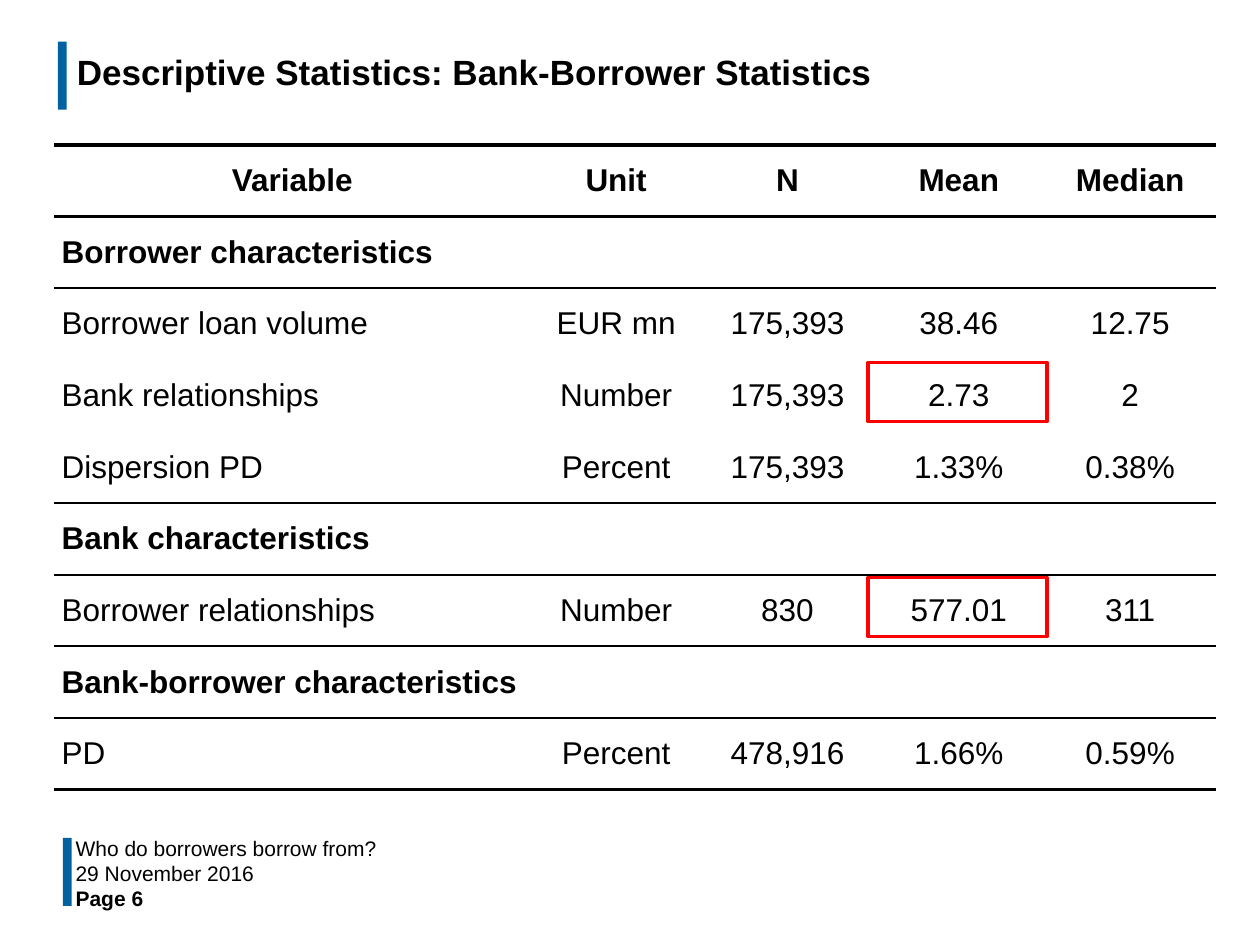
from lxml.etree import SubElement
from pptx import Presentation
from pptx.dml.color import RGBColor
from pptx.enum.shapes import MSO_SHAPE
from pptx.enum.text import MSO_ANCHOR, MSO_AUTO_SIZE, PP_ALIGN
from pptx.oxml.ns import qn
from pptx.util import Inches, Pt

BLACK, BLUE, RED = "000000", "0062A1", "FF0000"
TABLE_LEFT, TABLE_TOP = 0.43, 1.15
COLUMN_WIDTHS = [3.78] + [1.36] * 4
ROW_HEIGHT = 5.12 / 9
ROWS = [
    ["Variable", "Unit", "N", "Mean", "Median"],
    ["Borrower characteristics"],
    ["Borrower loan volume", "EUR mn", "175,393", "38.46", "12.75"],
    ["Bank relationships", "Number", "175,393", "2.73", "2"],
    ["Dispersion PD", "Percent", "175,393", "1.33%", "0.38%"],
    ["Bank characteristics"],
    ["Borrower relationships", "Number", "830", "577.01", "311"],
    ["Bank-borrower characteristics"],
    ["PD", "Percent", "478,916", "1.66%", "0.59%"],
]
# Width in points of each horizontal rule, from the table's top to its bottom
RULES = [2.25, 1.5, 1.5, 0, 0, 1.5, 1.5, 1.5, 1.5, 2.25]
MEAN_COLUMN = 3
HIGHLIGHTED_ROWS = [3, 6]
FOOTER = [("Who do borrowers borrow from?", False),
          ("29 November 2016", False), ("Page 6", True)]


def color(hex_string):
    return RGBColor.from_string(hex_string)


def write(paragraph, text, size, bold=False, align=PP_ALIGN.LEFT):
    paragraph.alignment = align
    run = paragraph.add_run()
    run.text = text
    run.font.name = "Arial"
    run.font.size = Pt(size)
    run.font.bold = bold
    run.font.color.rgb = color(BLACK)


def add_rectangle(slide, left, top, width, height, fill=None, line=None):
    shape = slide.shapes.add_shape(MSO_SHAPE.RECTANGLE, Inches(left), Inches(top),
                                   Inches(width), Inches(height))
    shape.shadow.inherit = False
    if fill:
        shape.fill.solid()
        shape.fill.fore_color.rgb = color(fill)
    else:
        shape.fill.background()
    if line:
        shape.line.color.rgb = color(line)
        shape.line.width = Pt(2)
    else:
        shape.line.fill.background()


def add_title(slide, text):
    title = slide.shapes.title
    title.left, title.top = Inches(0.51), Inches(0.28)
    title.width, title.height = Inches(9.29), Inches(0.63)
    frame = title.text_frame
    frame.auto_size = MSO_AUTO_SIZE.NONE
    frame.vertical_anchor = MSO_ANCHOR.MIDDLE
    paragraph = frame.paragraphs[0]
    paragraph.line_spacing = Pt(20.4)
    write(paragraph, text, 20, bold=True)


def add_footer_line(slide, index, text, bold):
    box = slide.shapes.add_textbox(Inches(0.51), Inches(6.64 + 0.2 * index),
                                   Inches(8.88 if index == 0 else 2.31), Inches(0.18))
    frame = box.text_frame
    frame.word_wrap = True
    frame.vertical_anchor = MSO_ANCHOR.MIDDLE
    frame.margin_left = frame.margin_right = Inches(0.09)
    frame.margin_top = frame.margin_bottom = Inches(0.04)
    write(frame.paragraphs[0], text, 12, bold)


def set_borders(cell, top, bottom):
    """Draw only horizontal borders; widths are in points, 0 for none."""
    properties = cell._tc.get_or_add_tcPr()
    for tag, width in (("a:lnL", 0), ("a:lnR", 0), ("a:lnT", top), ("a:lnB", bottom)):
        line = SubElement(properties, qn(tag), w=str(int(Pt(width))))
        if width:
            fill = SubElement(line, qn("a:solidFill"))
            SubElement(fill, qn("a:srgbClr"), val=BLACK)
        else:
            SubElement(line, qn("a:noFill"))


def add_statistics_table(slide):
    table = slide.shapes.add_table(
        len(ROWS), len(COLUMN_WIDTHS), Inches(TABLE_LEFT), Inches(TABLE_TOP),
        Inches(sum(COLUMN_WIDTHS)), Inches(ROW_HEIGHT * len(ROWS))).table
    table.first_row = table.horz_banding = False
    for column, width in zip(table.columns, COLUMN_WIDTHS):
        column.width = Inches(width)
    for row_index, texts in enumerate(ROWS):
        table.rows[row_index].height = Inches(ROW_HEIGHT)
        is_header, is_section = row_index == 0, len(texts) == 1
        for column_index in range(len(COLUMN_WIDTHS)):
            cell = table.cell(row_index, column_index)
            set_borders(cell, *RULES[row_index:row_index + 2])
            cell.fill.background()
            cell.vertical_anchor = MSO_ANCHOR.MIDDLE
            cell.margin_left = cell.margin_right = Inches(0.06)
            cell.margin_top = cell.margin_bottom = 0
            if column_index < len(texts):
                centred = is_header or column_index > 0
                write(cell.text_frame.paragraphs[0], texts[column_index], 18,
                      bold=is_header or is_section,
                      align=PP_ALIGN.CENTER if centred else PP_ALIGN.LEFT)
        if is_section:
            table.cell(row_index, 0).merge(table.cell(row_index, len(COLUMN_WIDTHS) - 1))


def highlight_mean(slide, row_index):
    left = TABLE_LEFT + sum(COLUMN_WIDTHS[:MEAN_COLUMN]) - 0.04
    top = TABLE_TOP + ROW_HEIGHT * row_index + 0.02
    add_rectangle(slide, left, top, 1.42, 0.47, line=RED)


def main():
    presentation = Presentation()
    presentation.slide_width, presentation.slide_height = Inches(10), Inches(7.5)
    slide = presentation.slides.add_slide(presentation.slide_layouts[5])
    add_rectangle(slide, 0.46, 0.33, 0.07, 0.54, fill=BLUE)
    add_rectangle(slide, 0.5, 6.65, 0.07, 0.54, fill=BLUE)
    add_title(slide, "Descriptive Statistics: Bank-Borrower Statistics")
    for index, (text, bold) in enumerate(FOOTER):
        add_footer_line(slide, index, text, bold)
    add_statistics_table(slide)
    for row_index in HIGHLIGHTED_ROWS:
        highlight_mean(slide, row_index)
    presentation.save("out.pptx")


if __name__ == "__main__":
    main()
